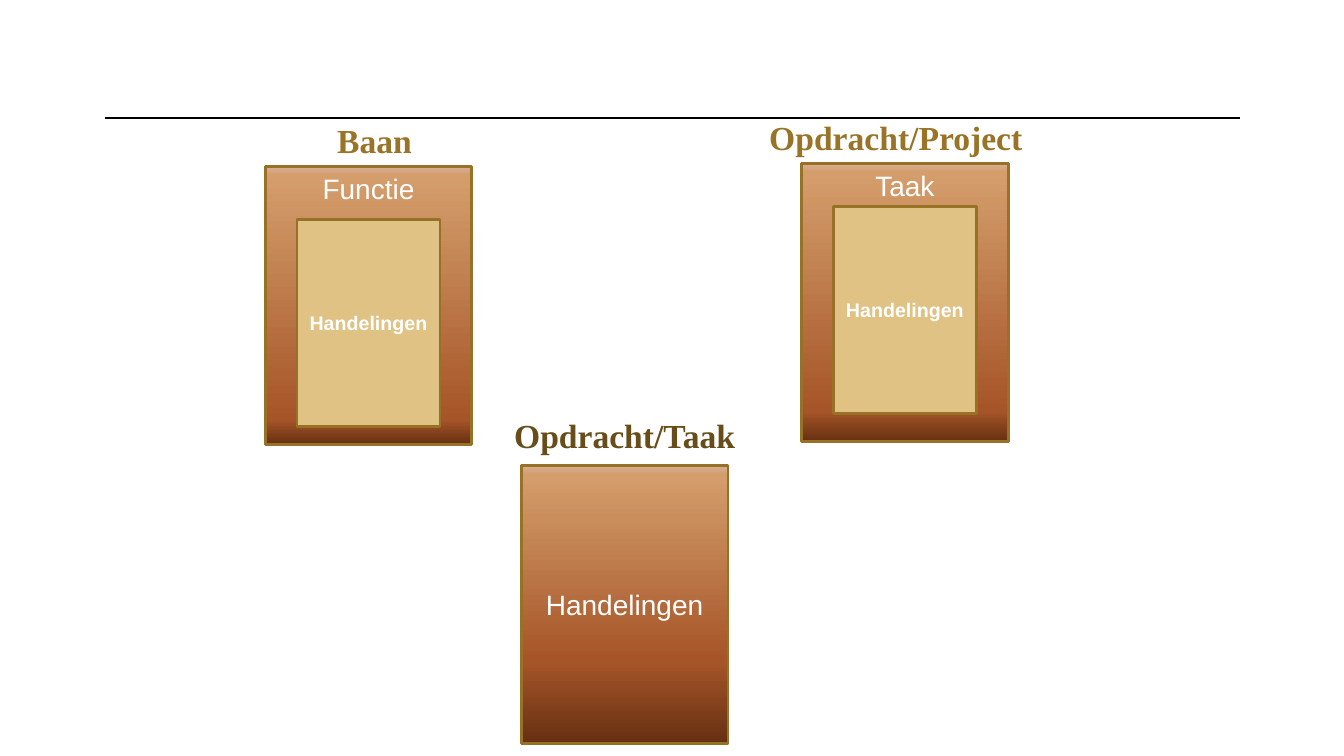
"""Slide with three framed boxes that relate jobs, projects and tasks to actions."""
from lxml.etree import SubElement
from pptx import Presentation
from pptx.dml.color import RGBColor
from pptx.enum.shapes import MSO_CONNECTOR, MSO_SHAPE
from pptx.enum.text import MSO_ANCHOR, PP_ALIGN
from pptx.oxml.ns import qn
from pptx.util import Inches, Pt

HUE = {
    "rule": "000000", "edge": "977126", "core": "E0C285", "text": "FFFFFF",
    "gold": "997326", "dark": "664D19",
    "pale": "D6B19C", "tan": "D49E6C", "rust": "A65528", "deep": "663012",
}

deck = Presentation()
deck.slide_width, deck.slide_height = Inches(13.33), Inches(7.5)
slide = deck.slides.add_slide(deck.slide_layouts[6])
col, row = deck.slide_width / 1333, deck.slide_height / 750


def write(shape, text, size, hue, bold, font="Arial", anchor=MSO_ANCHOR.MIDDLE):
    frame = shape.text_frame
    frame.text = text
    frame.word_wrap = True
    frame.vertical_anchor = anchor
    para = frame.paragraphs[0]
    para.alignment = PP_ALIGN.CENTER
    face = para.runs[0].font
    face.name, face.size, face.bold = font, Pt(size), bold
    face.color.rgb = RGBColor.from_string(HUE[hue])


def block(left, top, wide, high):
    shape = slide.shapes.add_shape(
        MSO_SHAPE.RECTANGLE, int(left * col), int(top * row), int(wide * col), int(high * row))
    shape.shadow.inherit = False
    shape.line.color.rgb = RGBColor.from_string(HUE["edge"])
    shape.line.width = Pt(2)
    return shape


rule = slide.shapes.add_connector(
    MSO_CONNECTOR.STRAIGHT, int(104 * col), int(117 * row), int(1230 * col), int(117 * row))
rule.line.color.rgb = RGBColor.from_string(HUE["rule"])
rule.line.width = Pt(1)
SubElement(rule.element.spPr, qn("a:effectLst"))

WIDE, HIGH = 205, 276
CORE_W, CORE_H = 142, 205
boxes = [
    (517, 462, 70, "Handelingen", None, ("Opdracht/Taak", 474, 407, 291, "dark")),
    (263, 165, 91, "Functie", 53, ("Baan", 273, 114, 197, "gold")),
    (795, 162, 89, "Taak", 43, ("Opdracht/Project", 738, 111, 301, "gold")),
]

for left, top, turn, label, drop, (title, head_x, head_y, head_w, hue) in boxes:
    outer = block(left, top, WIDE, HIGH)
    outer.fill.gradient()
    outer.fill.gradient_angle = 270
    stops = outer.element.spPr.find(qn("a:gradFill")).find(qn("a:gsLst"))
    stops.clear()
    for spot, name in ((0, "pale"), (3, "tan"), (turn, "rust"), (100, "deep")):
        stop = SubElement(stops, qn("a:gs"), pos=str(spot * 1000))
        SubElement(stop, qn("a:srgbClr"), val=HUE[name])
    write(outer, label, 20, "text", False,
          anchor=MSO_ANCHOR.TOP if drop else MSO_ANCHOR.MIDDLE)

    if drop:
        inner = block(left + (WIDE - CORE_W) / 2, top + drop, CORE_W, CORE_H)
        inner.fill.solid()
        inner.fill.fore_color.rgb = RGBColor.from_string(HUE["core"])
        write(inner, "Handelingen", 14, "text", True)

    head = slide.shapes.add_textbox(
        int(head_x * col), int(head_y * row), int(head_w * col), int(50 * row))
    write(head, title, 24, hue, True, "Times New Roman", MSO_ANCHOR.TOP)

deck.save("out.pptx")
